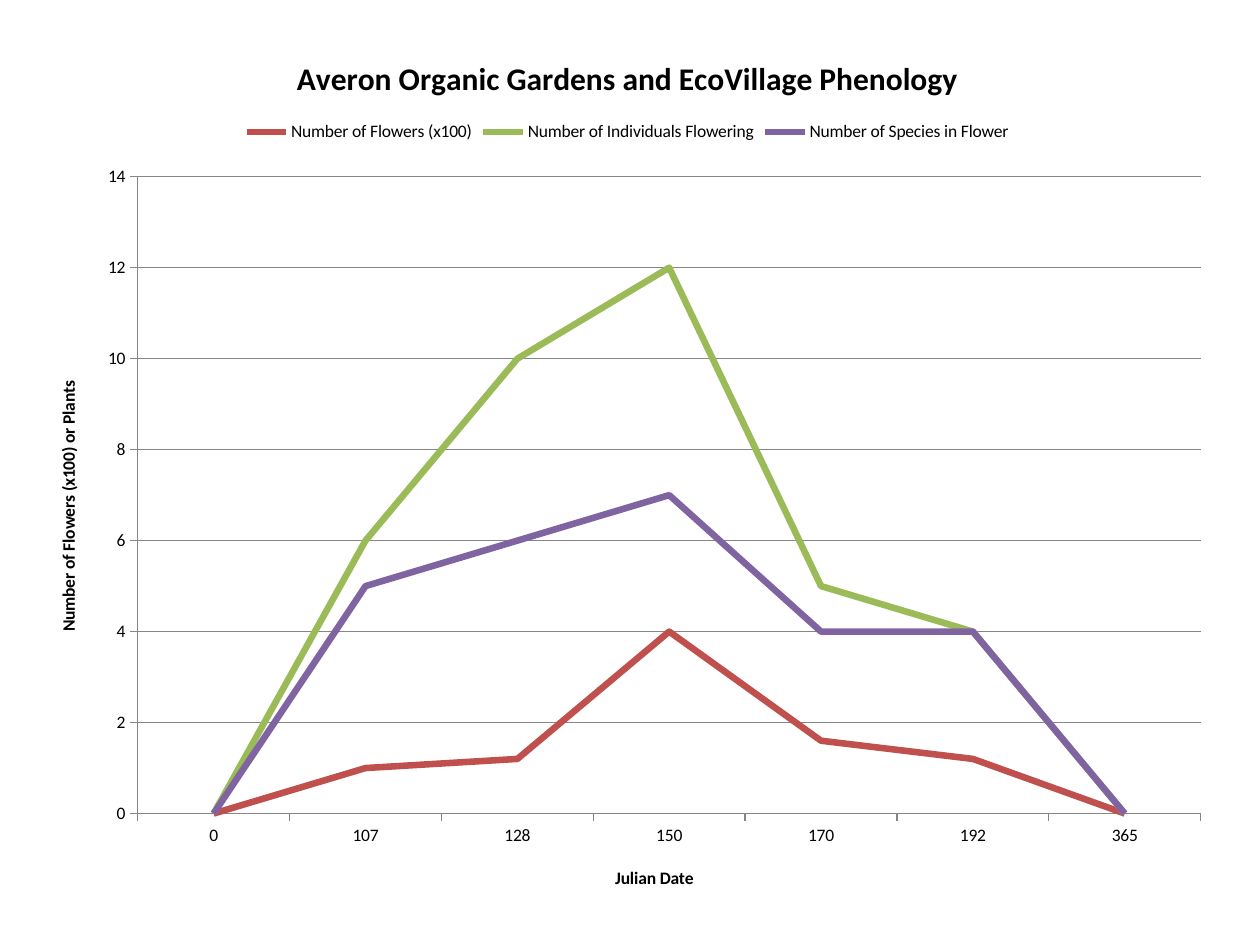
from dataclasses import dataclass

from lxml.etree import SubElement
from pptx import Presentation
from pptx.chart.data import CategoryChartData
from pptx.dml.color import RGBColor
from pptx.enum.chart import XL_CHART_TYPE, XL_LEGEND_POSITION, XL_TICK_MARK
from pptx.oxml.ns import qn
from pptx.util import Inches, Pt


@dataclass(frozen=True)
class Theme:
    font: str = "Calibri"
    text: str = "000000"
    axis: str = "868686"
    background: str = "FFFFFF"
    series: tuple = ("C0504D", "9BBB59", "8064A2")
    heading_size: float = 18
    body_size: float = 10
    series_width: float = 3.75
    axis_width: float = 0.75


class SlideBuilder:
    def __init__(self, slide, theme):
        self.slide = slide
        self.theme = theme
        fill = slide.background.fill
        fill.solid()
        fill.fore_color.rgb = RGBColor.from_string(theme.background)

    def style_font(self, font, size, bold=False):
        font.name = self.theme.font
        font.size = Pt(size)
        font.bold = bold
        font.color.rgb = RGBColor.from_string(self.theme.text)

    def style_line(self, line, color, width):
        line.color.rgb = RGBColor.from_string(color)
        line.width = Pt(width)

    def add_title(self, owner, text, size):
        """Give a chart or an axis its bold title."""
        paragraph = owner.text_frame.paragraphs[0]
        run = paragraph.add_run()
        run.text = text
        self.style_font(run.font, size, bold=True)

    def style_axis(self, axis, title):
        axis.major_tick_mark = XL_TICK_MARK.OUTSIDE
        axis.minor_tick_mark = XL_TICK_MARK.NONE
        self.style_font(axis.tick_labels.font, self.theme.body_size)
        self.style_line(axis.format.line, self.theme.axis, self.theme.axis_width)
        self.add_title(axis.axis_title, title, self.theme.body_size)

    def place_plot(self, chart, **fractions):
        """Fix the inner plot area as fractions of the chart."""
        plot_area = chart.plots[0]._element.getparent()
        layout = plot_area.find(qn("c:layout"))
        if layout is None:
            layout = SubElement(plot_area, qn("c:layout"))
            plot_area.insert(0, layout)
        manual = SubElement(layout, qn("c:manualLayout"))
        settings = {"layoutTarget": "inner", "xMode": "edge", "yMode": "edge", **fractions}
        for name, value in settings.items():
            SubElement(manual, qn(f"c:{name}")).set("val", str(value))

    def add_line_chart(self, box, title, categories, series):
        data = CategoryChartData()
        data.categories = categories
        for name, values in series.items():
            data.add_series(name, values)
        frame = self.slide.shapes.add_chart(
            XL_CHART_TYPE.LINE, *(Inches(length) for length in box), data
        )
        chart = frame.chart
        self.style_font(chart.font, self.theme.body_size)

        # Title and legend
        chart.has_title = True
        self.add_title(chart.chart_title, title, self.theme.heading_size)
        chart.chart_title.include_in_layout = False
        chart.has_legend = True
        chart.legend.position = XL_LEGEND_POSITION.TOP
        chart.legend.include_in_layout = False
        self.style_font(chart.legend.font, self.theme.body_size)

        # Series lines
        chart.plots[0].vary_by_categories = False
        for line, color in zip(chart.plots[0].series, self.theme.series):
            line.smooth = False
            self.style_line(line.format.line, color, self.theme.series_width)
        return chart


def main():
    prs = Presentation()
    prs.slide_width, prs.slide_height = Inches(10), Inches(7.5)
    theme = Theme()
    builder = SlideBuilder(prs.slides.add_slide(prs.slide_layouts[6]), theme)

    # Flowering through the year
    phenology = builder.add_line_chart(
        (0.24, 0.21, 9.48, 7.02),
        "Averon Organic Gardens and EcoVillage Phenology",
        ["0", "107", "128", "150", "170", "192", "365"],
        {
            "Number of Flowers (x100)": (0, 1, 1.2, 4, 1.6, 1.2, 0),
            "Number of Individuals Flowering": (0, 6, 10, 12, 5, 4, 0),
            "Number of Species in Flower": (0, 5, 6, 7, 4, 4, 0),
        },
    )
    builder.place_plot(phenology, x=0.09, y=0.17, w=0.89, h=0.72)

    # Axes and gridlines
    builder.style_axis(phenology.category_axis, "Julian Date")
    counts = phenology.value_axis
    builder.style_axis(counts, "Number of Flowers (x100) or Plants")
    counts.minimum_scale, counts.maximum_scale, counts.major_unit = 0, 14, 2
    counts.has_major_gridlines = True
    builder.style_line(counts.major_gridlines.format.line, theme.axis, theme.axis_width)

    prs.save("out.pptx")


if __name__ == "__main__":
    main()
